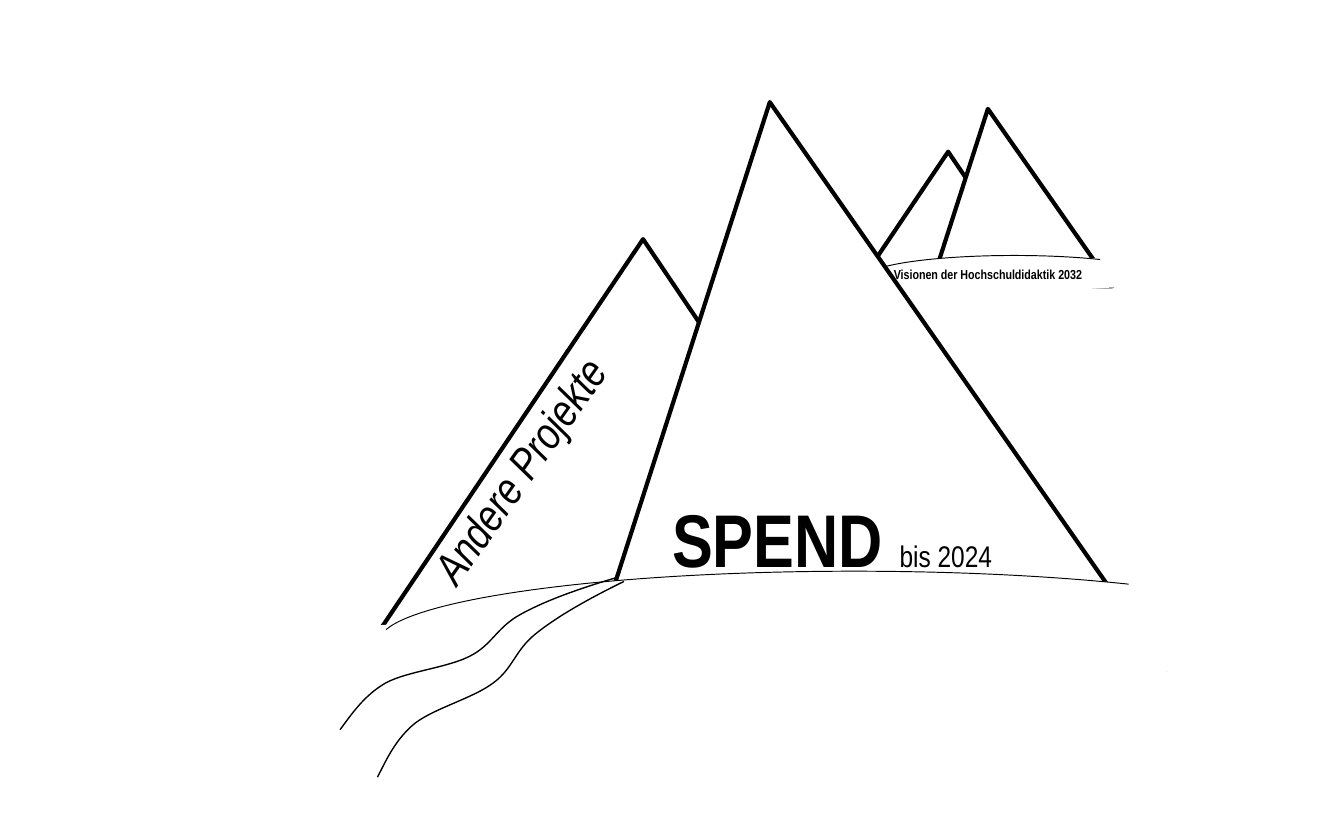
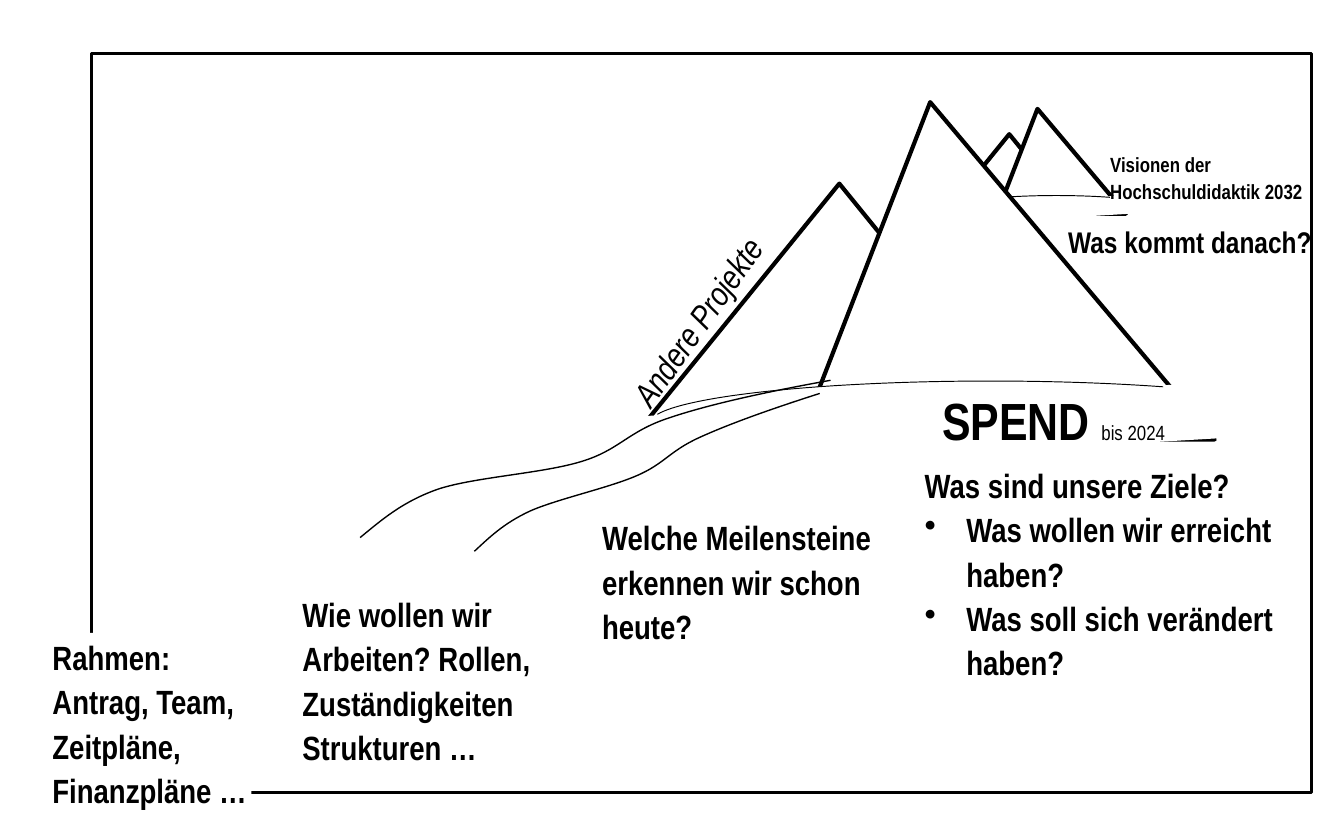
from lxml.etree import SubElement
from pptx import Presentation
from pptx.dml.color import RGBColor
from pptx.enum.shapes import MSO_SHAPE
from pptx.enum.text import MSO_AUTO_SIZE
from pptx.oxml.ns import qn
from pptx.util import Inches, Pt

COLORS = {"ink": "000000", "paper": "FFFFFF"}
FONT = "Arial Narrow"
LINE_SPACING = 1.1
BULLET_INDENT = 0.31
TEXT_ANGLE = 305.2
PATH_ANGLE = 350.4

# Parts of a mountain range, measured from its top left corner
# when the front mountain has the size FRONT_SIZE.
FRONT_SIZE = (4.31, 4.22)
RANGE_PARTS = [
    # preset, box, adjustments, rotation, line colour, line width
    (MSO_SHAPE.ISOSCELES_TRIANGLE, (0, 1.02, 4.31, 3.2), [0.5], 0, "ink", 2.25),
    (MSO_SHAPE.ISOSCELES_TRIANGLE, (1.74, 0, 4.31, 4.22), [0.315], 0, "ink", 2.25),
    (MSO_SHAPE.RECTANGLE, (-0.09, 3.72, 6.59, 0.68), [], 356.6, "paper", 1),
    (MSO_SHAPE.ARC, (0.19, 3.49, 7.07, 1.05), [108.895, 208.896], 0, "ink", 0.5),
]

# Winding path in thousandths of its box: a start and four Bézier curves.
PATH_UNITS = 1000
PATH_START = (0, 1000)
PATH_CURVES = [
    (45, 890), (90, 770), (168, 690),
    (247, 615), (388, 592), (470, 517),
    (552, 443), (568, 327), (656, 240),
    (745, 150), (870, 70), (1000, 0),
]


def color(name):
    return RGBColor.from_string(COLORS[name])


def style(shape, fill=None, line=None, width=1):
    shape.shadow.inherit = False
    if fill:
        shape.fill.solid()
        shape.fill.fore_color.rgb = color(fill)
    else:
        shape.fill.background()
    if line:
        shape.line.color.rgb = color(line)
        shape.line.width = Pt(width)
    else:
        shape.line.fill.background()


def add_mountain_range(slide, left, top, width, height):
    """Draw two mountains on a curved ground; width and height are the front one's."""
    scale_x, scale_y = width / FRONT_SIZE[0], height / FRONT_SIZE[1]
    group = slide.shapes.add_group_shape()
    for preset, (x, y, w, h), adjustments, rotation, line, line_width in RANGE_PARTS:
        part = group.shapes.add_shape(
            preset,
            Inches(left + x * scale_x), Inches(top + y * scale_y),
            Inches(w * scale_x), Inches(h * scale_y),
        )
        for index, value in enumerate(adjustments):
            part.adjustments[index] = value
        part.rotation = rotation
        style(part, "paper", line, line_width)


def add_winding_path(slide, left, top, width, height, rotation=0):
    scale = (Inches(width) / PATH_UNITS, Inches(height) / PATH_UNITS)
    builder = slide.shapes.build_freeform(*PATH_START, scale=scale)
    builder.add_line_segments(PATH_CURVES, close=False)
    shape = builder.convert_to_shape(Inches(left), Inches(top))
    # Each three line segments become one cubic curve.
    outline = shape._element.find(".//" + qn("a:path"))
    segments = outline.findall(qn("a:lnTo"))
    for index, segment in enumerate(segments):
        if index % 3 == 0:
            curve = SubElement(outline, qn("a:cubicBezTo"))
        curve.append(segment[0])
        outline.remove(segment)
    shape.rotation = rotation
    style(shape, line="ink", width=0.75)


def write(paragraph, text, size=18, bold=True, italic=False):
    for index, line in enumerate(text.split("\n")):
        if index:
            paragraph.add_line_break()
        run = paragraph.add_run()
        run.text = line
        run.font.name = FONT
        run.font.size = Pt(size)
        run.font.bold = bold
        run.font.italic = italic
        run.font.color.rgb = color("ink")


def add_bullet(paragraph):
    properties = paragraph._p.get_or_add_pPr()
    properties.set("marL", str(Inches(BULLET_INDENT)))
    properties.set("indent", str(-Inches(BULLET_INDENT)))
    SubElement(properties, qn("a:buChar")).set("char", "•")


def add_text(slide, box, text, bullets=(), rotation=0, fill=None, **text_format):
    """Add a text box without margins and return it."""
    shape = slide.shapes.add_textbox(*map(Inches, box))
    shape.rotation = rotation
    if fill:
        style(shape, fill)
    frame = shape.text_frame
    frame.word_wrap = True
    frame.margin_left = frame.margin_right = 0
    frame.margin_top = frame.margin_bottom = 0
    paragraph = frame.paragraphs[0]
    paragraph.line_spacing = LINE_SPACING
    write(paragraph, text, **text_format)
    for bullet in bullets:
        paragraph = frame.add_paragraph()
        paragraph.line_spacing = LINE_SPACING
        add_bullet(paragraph)
        write(paragraph, bullet, **text_format)
    return shape


def add_project_label(slide, box, size, date_size):
    label = add_text(slide, box, "SPEND ", size=size)
    write(label.text_frame.paragraphs[0], "bis 2024", size=date_size, bold=False)


def add_scenery(slide, far_range, vision_box, vision_size, near_range,
                project_box, project_sizes, others_box, others_size):
    """Draw both mountain ranges with their labels."""
    add_mountain_range(slide, *far_range)
    add_text(slide, vision_box, "Visionen der Hochschuldidaktik 2032", size=vision_size)
    add_mountain_range(slide, *near_range)
    add_project_label(slide, project_box, *project_sizes)
    add_text(slide, others_box, "Andere Projekte", rotation=TEXT_ANGLE,
             size=others_size, bold=False, italic=True)


def build_overview(slide):
    add_scenery(
        slide,
        far_range=(6.38, 0.81, 1.35, 1.32),
        vision_box=(6.65, 1.97, 1.55, 0.35), vision_size=7,
        near_range=(2.63, 0.76, 4.31, 4.22),
        project_box=(5, 3.6, 3.01, 0.65), project_sizes=(40, 16),
        others_box=(2.63, 2.84, 3.01, 0.42), others_size=24,
    )
    add_winding_path(slide, 2.53, 4.3, 2.05, 1.13)
    add_winding_path(slide, 2.7, 4.49, 2.05, 1.13, PATH_ANGLE)


def build_questions(slide):
    add_scenery(
        slide,
        far_range=(7.03, 0.81, 0.96, 0.78),
        vision_box=(8.26, 1.11, 1.55, 0.35), vision_size=11,
        near_range=(4.7, 0.76, 3.09, 2.51),
        project_box=(7.01, 2.84, 2.03, 0.47), project_sizes=(28, 11),
        others_box=(4.15, 1.57, 3.01, 0.42), others_size=18,
    )
    add_text(slide, (6.88, 3.43, 2.88, 2.51), "Was sind unsere Ziele?",
             bullets=["Was wollen wir erreicht haben?", "Was soll sich verändert haben?"])
    add_text(slide, (4.48, 3.82, 2.18, 1.54),
             "Welche Meilensteine erkennen wir schon heute?")
    next_question = add_text(slide, (7.85, 1.59, 2.13, 0.37), "Was kommt danach?", size=16)
    frame = next_question.text_frame
    frame.word_wrap = False
    frame.auto_size = MSO_AUTO_SIZE.SHAPE_TO_FIT_TEXT
    frame.margin_left = frame.margin_right = Inches(0.1)
    frame.margin_top = frame.margin_bottom = Inches(0.05)
    add_text(slide, (2.25, 4.39, 2.18, 1.54),
             "Wie wollen wir Arbeiten? Rollen, Zuständigkeiten Strukturen …")

    border = slide.shapes.add_shape(
        MSO_SHAPE.RECTANGLE, *map(Inches, (0.68, 0.4, 9.08, 5.5)))
    style(border, line="ink", width=1.5)
    add_text(slide, (0.39, 4.71, 1.48, 1.54),
             "Rahmen:\nAntrag, Team, Zeitpläne, Finanzpläne …", fill="paper")

    add_winding_path(slide, 2.68, 2.83, 3.5, 1.17)
    add_winding_path(slide, 3.45, 3.15, 2.73, 0.73, PATH_ANGLE)


def main():
    presentation = Presentation()
    presentation.slide_width = Inches(10)
    presentation.slide_height = Inches(6.25)
    blank_layout = presentation.slide_layouts[6]
    for build in (build_overview, build_questions):
        build(presentation.slides.add_slide(blank_layout))
    presentation.save("out.pptx")


if __name__ == "__main__":
    main()
